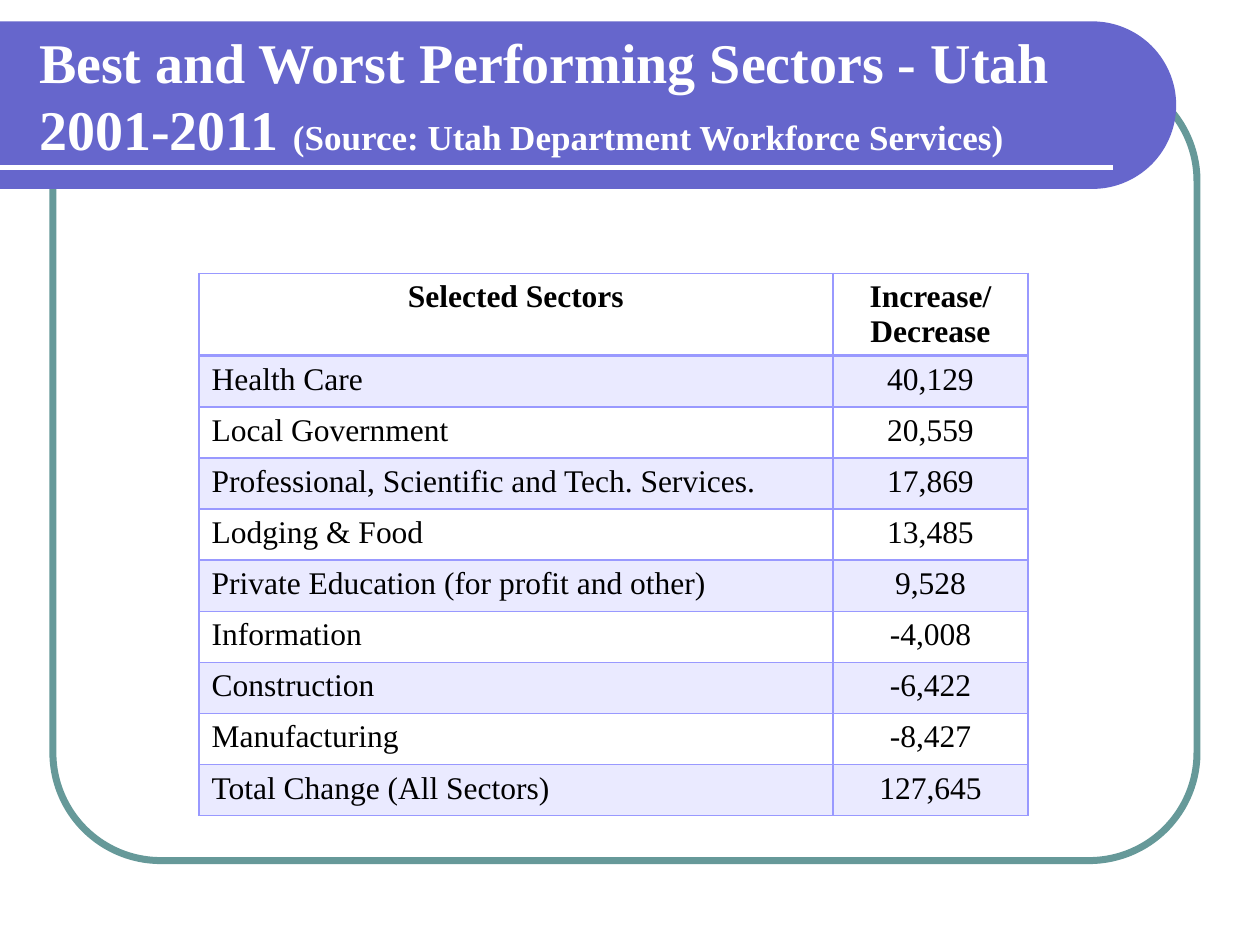
import math
from dataclasses import dataclass
from lxml import etree
from pptx import Presentation
from pptx.dml.color import RGBColor
from pptx.enum import shapes, text
from pptx.oxml import ns
from pptx.util import Inches, Pt


@dataclass(frozen=True)
class Theme:
    font: str = "Times New Roman"
    band: str = "6666CC"
    frame: str = "669999"
    grid: str = "9999FF"
    ink: str = "000000"
    white: str = "FFFFFF"
    head: int = 32
    note: int = 20
    body: int = 18
    tint: int = 20


@dataclass(frozen=True)
class Sector:
    name: str
    change: str


THEME = Theme()
SECTORS = [
    Sector("Health Care", "40,129"),
    Sector("Local Government", "20,559"),
    Sector("Professional, Scientific and Tech. Services.", "17,869"),
    Sector("Lodging & Food", "13,485"),
    Sector("Private Education (for profit and other)", "9,528"),
    Sector("Information", "-4,008"),
    Sector("Construction", "-6,422"),
    Sector("Manufacturing", "-8,427"),
    Sector("Total Change (All Sectors)", "127,645"),
]


def color(code: str) -> RGBColor:
    return RGBColor.from_string(code)


def style(font, size: int, code: str, bold: bool) -> None:
    font.name = THEME.font
    font.size = Pt(size)
    font.bold = bold
    font.color.rgb = color(code)


def draw_frame(slide) -> None:
    frame = slide.shapes.add_shape(
        shapes.MSO_SHAPE.ROUNDED_RECTANGLE,
        Inches(0.42), Inches(0.58), Inches(9.08), Inches(6.25))
    frame.adjustments[0] = 0.137
    frame.shadow.inherit = False
    frame.fill.background()
    frame.line.color.rgb = color(THEME.frame)
    frame.line.width = Pt(4)


def draw_band(slide) -> None:
    x, top, base = 8.67, 0.17, 1.5
    mid, radius = (top + base) / 2, (base - top) / 2
    arc = [(Inches(x + radius * math.cos(a)), Inches(mid + radius * math.sin(a)))
           for a in (math.radians(d) for d in range(-90, 91, 3))]
    pen = slide.shapes.build_freeform(0, Inches(top))
    pen.add_line_segments(arc + [(0, Inches(base))], close=True)
    band = pen.convert_to_shape()
    band.shadow.inherit = False
    band.fill.solid()
    band.fill.fore_color.rgb = color(THEME.band)
    band.line.fill.background()


def draw_rule(slide) -> None:
    rule = slide.shapes.add_connector(
        shapes.MSO_CONNECTOR.STRAIGHT, 0, Inches(1.33), Inches(8.83), Inches(1.33))
    rule.line.color.rgb = color(THEME.white)
    rule.line.width = Pt(3)
    etree.SubElement(rule.element.spPr, ns.qn("a:effectLst"))


def draw_title(slide) -> None:
    title = slide.shapes.title
    slide.shapes.element.append(title.element)
    title.left, title.top = Inches(0.21), Inches(0.25)
    title.width, title.height = Inches(8.77), Inches(1)
    frame = title.text_frame
    frame.word_wrap = True
    frame.auto_size = text.MSO_AUTO_SIZE.NONE
    frame.vertical_anchor = text.MSO_ANCHOR.MIDDLE
    para = frame.paragraphs[0]
    para.alignment = text.PP_ALIGN.LEFT
    style(para.font, THEME.head, THEME.white, True)
    para.add_run().text = "Best and Worst Performing Sectors - Utah"
    para.add_line_break()
    para.add_run().text = "2001-2011 "
    note = para.add_run()
    note.text = "(Source: Utah Department Workforce Services)"
    note.font.size = Pt(THEME.note)


def add_edge(cell, side: str, width: int) -> None:
    edge = etree.SubElement(cell._tc.get_or_add_tcPr(), ns.qn(f"a:ln{side}"), w=str(Pt(width)))
    fill = etree.SubElement(edge, ns.qn("a:solidFill"))
    etree.SubElement(fill, ns.qn("a:srgbClr"), val=THEME.grid)


def fill_cell(cell, words: str, row: int, center: bool) -> None:
    cell.text = words
    for para in cell.text_frame.paragraphs:
        para.alignment = text.PP_ALIGN.CENTER if center else text.PP_ALIGN.LEFT
        style(para.font, THEME.body, THEME.ink, row == 0)
    for side in "LRTB":
        thick = (row, side) in ((0, "B"), (1, "T"))
        add_edge(cell, side, 2 if thick else 1)
    if row % 2:
        cell.fill.solid()
        cell.fill.fore_color.rgb = color(THEME.grid)
        tone = cell._tc.tcPr.find(ns.qn("a:solidFill"))[0]
        etree.SubElement(tone, ns.qn("a:alpha"), val=str(THEME.tint * 1000))
    else:
        cell.fill.background()


def draw_table(slide) -> None:
    rows = [Sector("Selected Sectors", "Increase/\nDecrease")] + SECTORS
    high, head = 4.3, 0.65
    step = (high - head) / len(SECTORS)
    table = slide.shapes.add_table(
        len(rows), 2, Inches(1.58), Inches(2.17), Inches(6.58), Inches(high)).table
    table.first_row = table.horz_banding = False
    for col, width in zip(table.columns, (5.03, 1.55)):
        col.width = Inches(width)
    for i, sector in enumerate(rows):
        table.rows[i].height = Inches(step if i else head)
        fill_cell(table.cell(i, 0), sector.name, i, i == 0)
        fill_cell(table.cell(i, 1), sector.change, i, True)


def main() -> None:
    deck = Presentation()
    deck.slide_width, deck.slide_height = Inches(10), Inches(7.5)
    slide = deck.slides.add_slide(deck.slide_layouts[5])
    for draw in (draw_frame, draw_band, draw_rule, draw_title, draw_table):
        draw(slide)
    deck.save("out.pptx")


if __name__ == "__main__":
    main()
